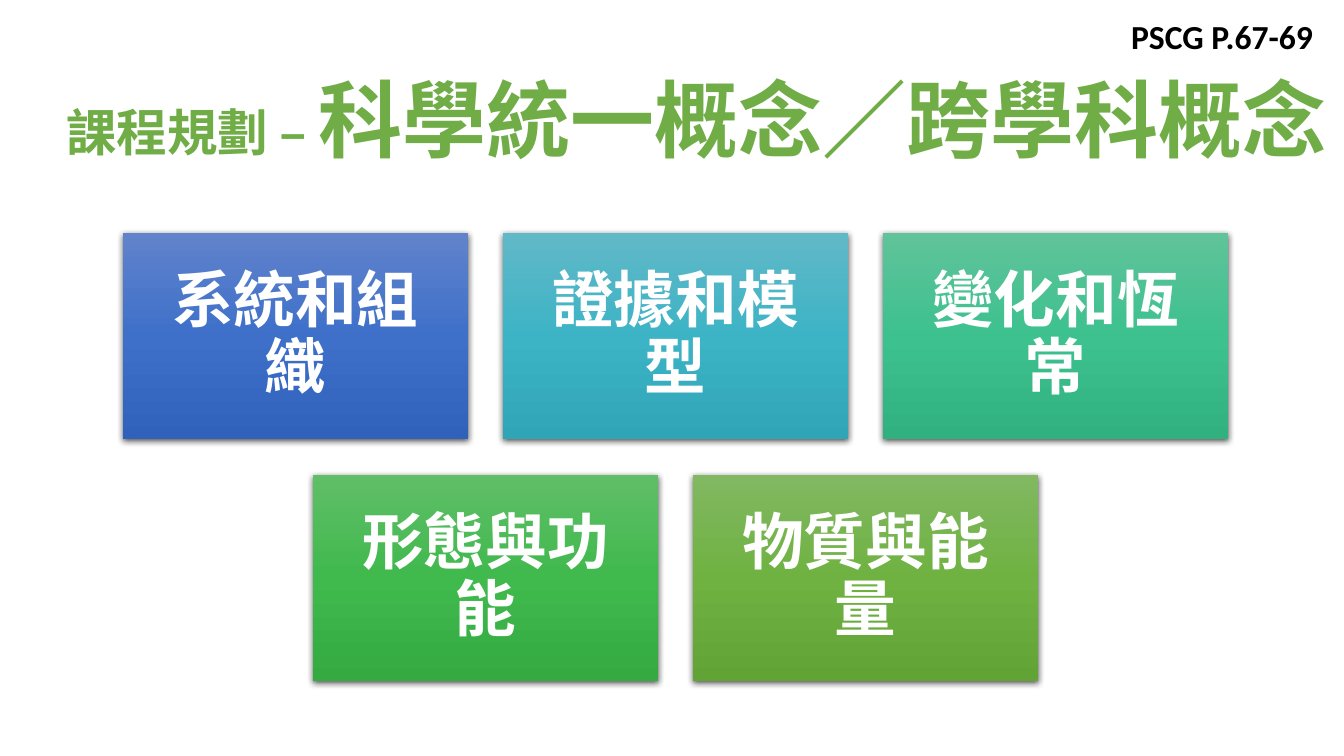
from pptx import Presentation
from pptx.dml.color import RGBColor
from pptx.enum.shapes import MSO_SHAPE as SHAPE
from pptx.enum.text import MSO_ANCHOR as ANCHOR, MSO_AUTO_SIZE as AUTO, PP_ALIGN as ALIGN
from pptx.oxml import parse_xml
from pptx.oxml.ns import nsdecls, qn
from pptx.util import Inches, Pt
from lxml.etree import SubElement

COLORS = {"title": "70AD47", "text": "FFFFFF", "page": "000000", "shadow": "000000"}
CJK = "Noto Sans CJK SC"
TITLE = [("課程規劃 – ", 36), ("科學統一概念／跨學科概念", 60)]
PAGE_REF = "PSCG P.67-69"
CONCEPT_ROWS = [
    [("系統和組織", ("6183CB", "3E70CA", "3062BB")),
     ("證據和模型", ("61B8C7", "3DB4C6", "30A5B7")),
     ("變化和恆常", ("60C39A", "3DC18F", "31B080"))],
    [("形態與功能", ("60BE68", "40B94D", "34AA41")),
     ("物質與能量", ("81B861", "6FB242", "62A336"))],
]
CARD_W, CARD_H, GAP = 3.42, 2.05, 0.35
CENTER_X, TOP = 6.7, 2.31


def set_font(font, name, size, color):
    font.name, font.size, font.bold = name, Pt(size), True
    font.color.rgb = RGBColor.from_string(COLORS[color])
    ea = SubElement(font._element, qn("a:ea"))
    ea.set("typeface", name)


def style_card(s, stops):
    s.line.fill.background()
    stop_xml = "".join(
        f'<a:gs pos="{i * 50000}"><a:srgbClr val="{c}"/></a:gs>' for i, c in enumerate(stops))
    sp_pr = s._element.spPr
    sp_pr.find(qn("a:ln")).addprevious(parse_xml(
        f'<a:gradFill {nsdecls("a")} rotWithShape="1"><a:gsLst>{stop_xml}</a:gsLst>'
        '<a:lin ang="5400000" scaled="0"/></a:gradFill>'))
    sp_pr.append(parse_xml(
        f'<a:effectLst {nsdecls("a")}><a:outerShdw blurRad="{Pt(4.5)}" dist="{Pt(1.5)}" '
        f'dir="5400000" algn="ctr" rotWithShape="0"><a:srgbClr val="{COLORS["shadow"]}">'
        '<a:alpha val="63000"/></a:srgbClr></a:outerShdw></a:effectLst>'))


def add_card(slide, x, y, label, stops):
    s = slide.shapes.add_shape(
        SHAPE.RECTANGLE, Inches(x), Inches(y), Inches(CARD_W), Inches(CARD_H))
    style_card(s, stops)
    tf = s.text_frame
    tf.word_wrap, tf.vertical_anchor = True, ANCHOR.MIDDLE
    tf.margin_left = tf.margin_right = Inches(0.25)
    tf.margin_top = tf.margin_bottom = Inches(0.18)
    p = tf.paragraphs[0]
    p.alignment, p.line_spacing = ALIGN.CENTER, 0.9
    r = p.add_run()
    r.text = label
    set_font(r.font, CJK, 44, "text")


def add_title(slide):
    title = slide.shapes.title
    title.left, title.top = Inches(0.56), Inches(0.62)
    title.width, title.height = Inches(12.85), Inches(1.11)
    tf = title.text_frame
    tf.word_wrap, tf.auto_size, tf.vertical_anchor = False, AUTO.NONE, ANCHOR.TOP
    p = tf.paragraphs[0]
    p.alignment = ALIGN.LEFT
    for text, size in TITLE:
        r = p.add_run()
        r.text = text
        set_font(r.font, CJK, size, "title")


def add_page_ref(slide):
    box = slide.shapes.add_textbox(Inches(11.12), Inches(0.11), Inches(2.21), Inches(0.5))
    tf = box.text_frame
    tf.word_wrap = True
    p = tf.paragraphs[0]
    r = p.add_run()
    r.text = PAGE_REF
    set_font(r.font, "Calibri", 24, "page")


def main():
    prs = Presentation()
    prs.slide_width, prs.slide_height = Inches(13.33), Inches(7.5)
    slide = prs.slides.add_slide(prs.slide_layouts[5])
    add_title(slide)
    for row, cards in enumerate(CONCEPT_ROWS):
        row_w = len(cards) * (CARD_W + GAP) - GAP
        for col, (label, stops) in enumerate(cards):
            x = CENTER_X - row_w / 2 + col * (CARD_W + GAP)
            add_card(slide, x, TOP + row * (CARD_H + GAP), label, stops)
    add_page_ref(slide)
    prs.save("out.pptx")


if __name__ == "__main__":
    main()
